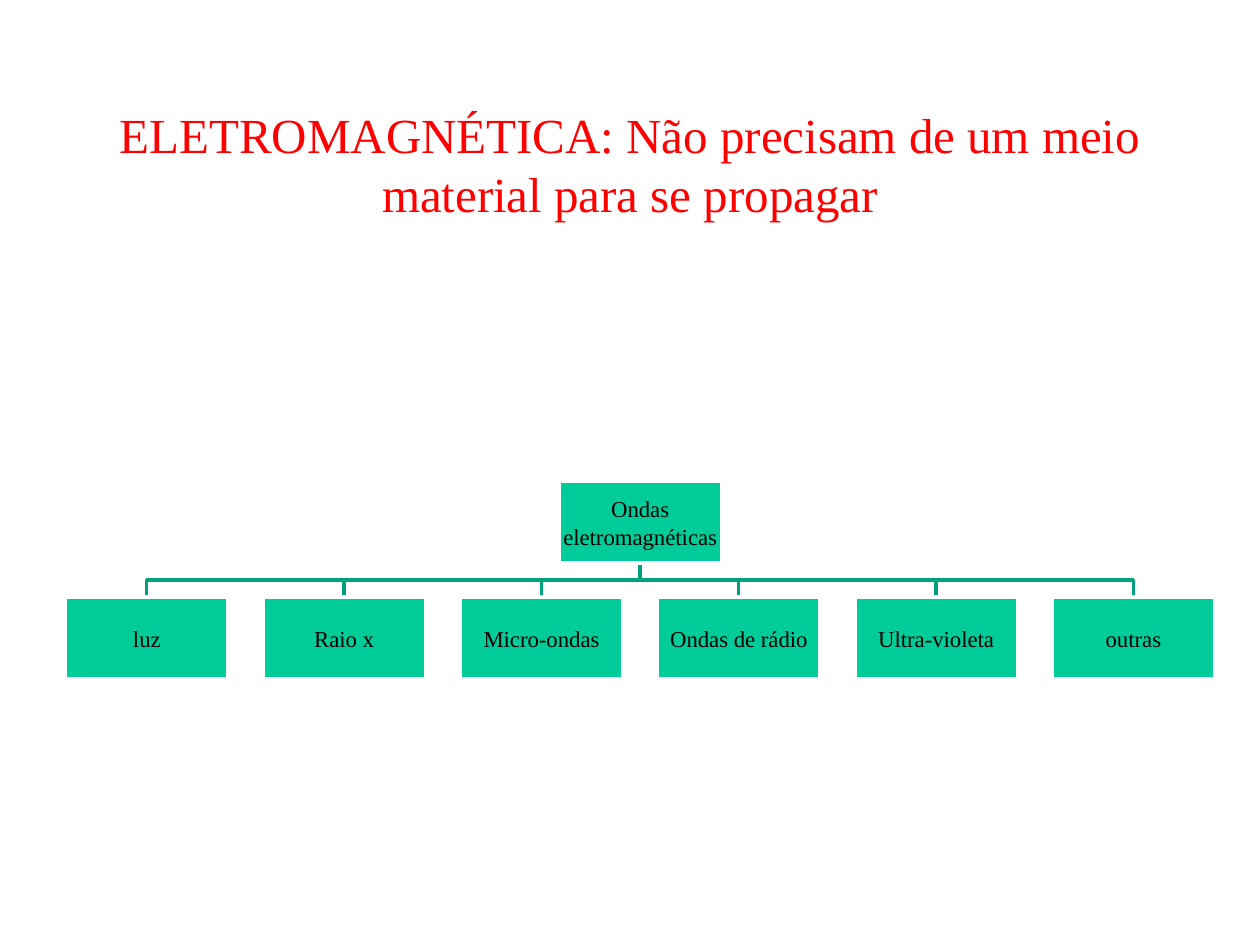
from pptx import Presentation
from pptx.dml.color import RGBColor
from pptx.enum.shapes import MSO_SHAPE
from pptx.enum.text import MSO_ANCHOR, MSO_AUTO_SIZE, PP_ALIGN
from pptx.util import Inches, Pt

RECT = MSO_SHAPE.RECTANGLE
MIDDLE = MSO_ANCHOR.MIDDLE
NO_FIT = MSO_AUTO_SIZE.NONE
CENTER = PP_ALIGN.CENTER

FONT = "Times New Roman"
TITLE = "ELETROMAGNÉTICA: Não precisam de um meio material para se propagar"
ROOT = "Ondas eletromagnéticas"
KINDS = ["luz", "Raio x", "Micro-ondas", "Ondas de rádio", "Ultra-violeta", "outras"]
BOX_W, BOX_H = 1.29, 0.65


def color(code):
    return RGBColor.from_string(code)


def write(frame, text, size, code):
    frame.text = text
    frame.word_wrap = True
    frame.auto_size = NO_FIT
    frame.vertical_anchor = MIDDLE
    para = frame.paragraphs[0]
    para.alignment = CENTER
    para.font.name = FONT
    para.font.size = Pt(size)
    para.font.color.rgb = color(code)


def add_title(slide, left, top, width, height):
    title = slide.shapes.title
    title.left, title.top = Inches(left), Inches(top)
    title.width, title.height = Inches(width), Inches(height)
    write(title.text_frame, TITLE, 28, "FF0000")


def add_box(slide, mid, top, text):
    box = slide.shapes.add_shape(RECT, Inches(mid - BOX_W / 2), Inches(top),
                                 Inches(BOX_W), Inches(BOX_H))
    box.shadow.inherit = False
    box.fill.solid()
    box.fill.fore_color.rgb = color("00CC99")
    box.line.color.rgb = color("FFFFFF")
    box.line.width = Pt(2)
    frame = box.text_frame
    frame.margin_left = frame.margin_right = Inches(0.01)
    frame.margin_top = frame.margin_bottom = Inches(0.01)
    write(frame, text, 13, "000000")


def add_branch(slide, start, end, top, bottom):
    bend = (top + bottom) / 2
    path = slide.shapes.build_freeform(Inches(start), Inches(top))
    points = [(start, bend), (end, bend), (end, bottom)]
    path.add_line_segments([(Inches(x), Inches(y)) for x, y in points], close=False)
    branch = path.convert_to_shape()
    branch.shadow.inherit = False
    branch.fill.background()
    branch.line.color.rgb = color("00A37B")
    branch.line.width = Pt(2)


def add_tree(slide, left, top, width, height):
    center = left + width / 2
    row = top + height - BOX_H
    step = (width - BOX_W) / (len(KINDS) - 1)
    mids = [left + BOX_W / 2 + i * step for i in range(len(KINDS))]
    # Branches lie behind the boxes
    for mid in mids:
        add_branch(slide, center, mid, top + BOX_H, row)
    # Root and its kinds
    add_box(slide, center, top, ROOT)
    for mid, kind in zip(mids, KINDS):
        add_box(slide, mid, row, kind)


def main():
    deck = Presentation()
    deck.slide_width, deck.slide_height = Inches(10), Inches(7.5)
    slide = deck.slides.add_slide(deck.slide_layouts[5])
    add_title(slide, 0.75, 0.67, 8.5, 1.25)
    add_tree(slide, 0.52, 3.82, 9.12, 1.57)
    deck.save("out.pptx")


if __name__ == "__main__":
    main()
